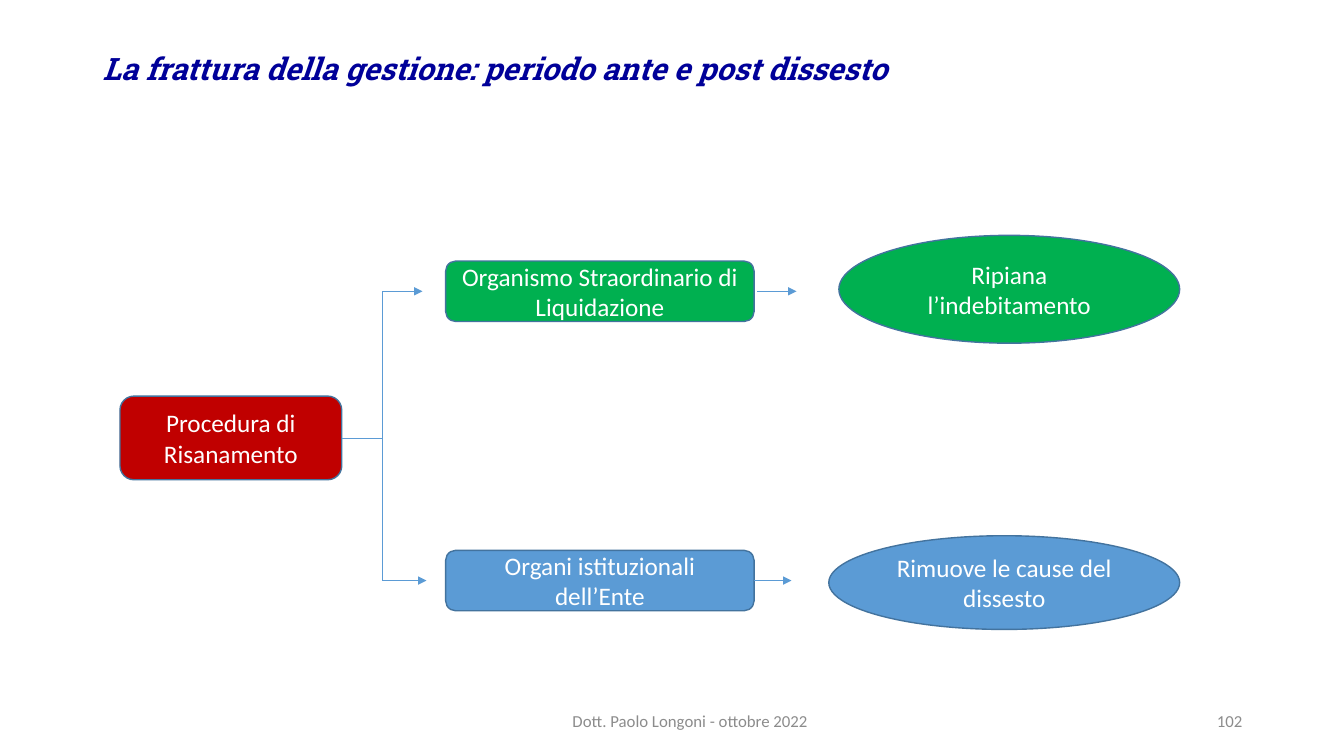
import pptx
import pptx.util
import pptx.dml.color
import pptx.enum.shapes
import pptx.enum.text
import pptx.oxml.xmlchemy

Inches = pptx.util.Inches
Pt = pptx.util.Pt
RGBColor = pptx.dml.color.RGBColor
Shape = pptx.enum.shapes.MSO_SHAPE
Align = pptx.enum.text.PP_ALIGN
OxmlElement = pptx.oxml.xmlchemy.OxmlElement

NAVY = RGBColor(0x00, 0x00, 0x99)
GREY = RGBColor(0x8C, 0x8C, 0x8C)
RED = RGBColor(0xC0, 0x00, 0x00)
GREEN = RGBColor(0x00, 0xB0, 0x50)
BLUE = RGBColor(0x5B, 0x9B, 0xD5)
OUTLINE = RGBColor(0x43, 0x73, 0x9E)
WHITE = RGBColor(0xFF, 0xFF, 0xFF)

SLIDE_WIDTH, SLIDE_HEIGHT = 13.33, 7.5
BODY_LEFT, BODY_WIDTH = 0.92, 11.5
TRUNK = 3.79
ORGAN_LEFT, ORGAN_WIDTH, ORGAN_HEIGHT = 4.42, 3.06, 0.6
OUTCOME_RIGHT = 11.7


def write_text(shape, text, size=18, font="Calibri", color=WHITE, align=Align.CENTER,
               bold=False, italic=False, line_spacing=None):
    frame = shape.text_frame
    frame.word_wrap = True
    frame.vertical_anchor = pptx.enum.text.MSO_ANCHOR.MIDDLE
    paragraph = frame.paragraphs[0]
    paragraph.alignment = align
    paragraph.line_spacing = line_spacing
    run = paragraph.add_run()
    run.text = text
    run.font.size = Pt(size)
    run.font.name = font
    run.font.color.rgb = color
    run.font.bold = bold
    run.font.italic = italic


def add_label(slide, box, text, **text_format):
    label = slide.shapes.add_textbox(*map(Inches, box))
    write_text(label, text, **text_format)


def add_node(slide, kind, box, text, fill):
    node = slide.shapes.add_shape(kind, *map(Inches, box))
    node.shadow.inherit = False
    node.fill.solid()
    node.fill.fore_color.rgb = fill
    node.line.color.rgb = OUTLINE
    node.line.width = Pt(1)
    write_text(node, text)


def add_line(slide, start, end, arrow=False):
    connector = slide.shapes.add_connector(
        pptx.enum.shapes.MSO_CONNECTOR.STRAIGHT, *map(Inches, start + end))
    connector.line.color.rgb = BLUE
    connector.line.width = Pt(0.5)
    if arrow:
        tail = OxmlElement("a:tailEnd")
        tail.set("type", "triangle")
        connector.line._get_or_add_ln().append(tail)
    connector._element.spPr.append(OxmlElement("a:effectLst"))


def add_root(slide, box, branch_levels):
    add_node(slide, Shape.ROUNDED_RECTANGLE, box, "Procedura di Risanamento", RED)
    left, top, width, height = box
    middle = top + height / 2
    add_line(slide, (left + width, middle), (TRUNK, middle))
    add_line(slide, (TRUNK, branch_levels[-1]), (TRUNK, branch_levels[0]))


def add_branch(slide, level, organ, outcome, fill, outcome_size, entry_end, exit_span):
    add_line(slide, (TRUNK, level), (entry_end, level), arrow=True)
    organ_box = (ORGAN_LEFT, level - ORGAN_HEIGHT / 2, ORGAN_WIDTH, ORGAN_HEIGHT)
    add_node(slide, Shape.ROUNDED_RECTANGLE, organ_box, organ, fill)
    exit_start, exit_end = exit_span
    add_line(slide, (exit_start, level), (exit_end, level), arrow=True)
    width, height, drop = outcome_size
    outcome_box = (OUTCOME_RIGHT - width, level + drop - height / 2, width, height)
    add_node(slide, Shape.OVAL, outcome_box, outcome, fill)


def add_footer(slide, top, height):
    add_label(slide, (3.19, top, 7.31, height), "Dott. Paolo Longoni - ottobre 2022",
              size=12, color=GREY)
    add_label(slide, (BODY_LEFT + BODY_WIDTH - 3, top, 3, height), "102",
              size=12, color=GREY, align=Align.RIGHT)


def main():
    presentation = pptx.Presentation()
    presentation.slide_width = Inches(SLIDE_WIDTH)
    presentation.slide_height = Inches(SLIDE_HEIGHT)
    slide = presentation.slides.add_slide(presentation.slide_layouts[6])

    add_label(slide, (BODY_LEFT, 0.4, BODY_WIDTH, 0.6),
              "La frattura della gestione: periodo ante e post dissesto",
              size=22, font="Roboto Slab", color=NAVY, align=Align.LEFT,
              bold=True, italic=True, line_spacing=0.9)

    branches = [
        (2.89, "Organismo Straordinario di Liquidazione", "Ripiana l’indebitamento",
         GREEN, (3.38, 1.07, -0.02), 4.19, (7.51, 7.9)),
        (5.76, "Organi istituzionali dell’Ente", "Rimuove le cause del dissesto",
         BLUE, (3.48, 0.93, 0.02), 4.23, (7.48, 7.85)),
    ]
    add_root(slide, (1.19, 3.93, 2.2, 0.83), [branch[0] for branch in branches])
    for branch in branches:
        add_branch(slide, *branch)

    add_footer(slide, 6.95, 0.4)
    presentation.save("out.pptx")


if __name__ == "__main__":
    main()
